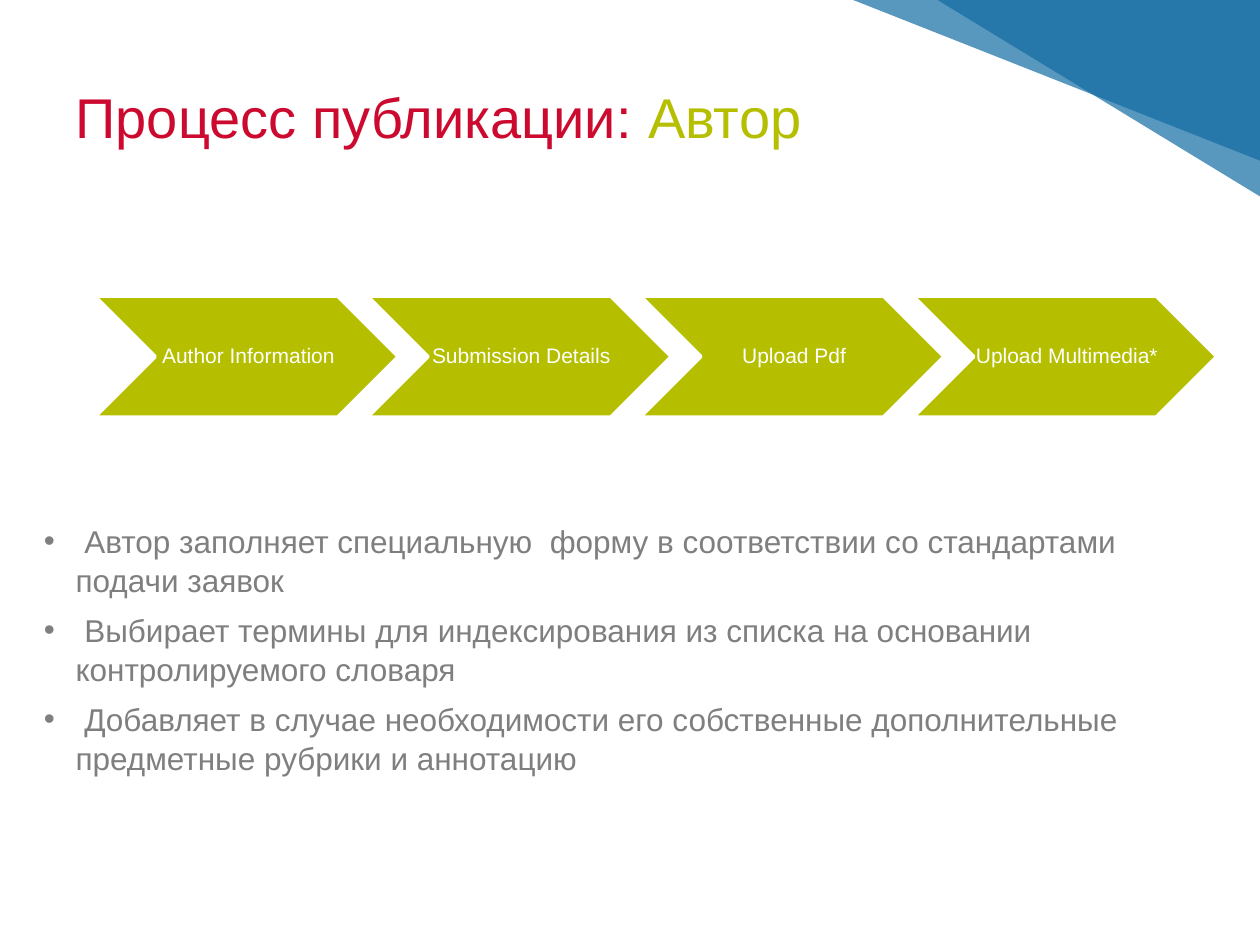
"""Build the slide on the author's part of the publication process."""
from lxml import etree
from pptx import Presentation
from pptx.dml.color import RGBColor
from pptx.enum.shapes import MSO_SHAPE
from pptx.enum.text import MSO_ANCHOR, MSO_AUTO_SIZE, PP_ALIGN
from pptx.oxml.ns import qn
from pptx.util import Cm, Pt

TRIANGLE = MSO_SHAPE.RIGHT_TRIANGLE
CHEVRON = MSO_SHAPE.CHEVRON
MIDDLE = MSO_ANCHOR.MIDDLE
TOP = MSO_ANCHOR.TOP
NO_AUTOFIT = MSO_AUTO_SIZE.NONE
LEFT = PP_ALIGN.LEFT
CENTER = PP_ALIGN.CENTER

BLUE = RGBColor(0x0F, 0x6A, 0xA1)
RED = RGBColor(0xCC, 0x09, 0x2F)
LIME = RGBColor(0xB5, 0xBF, 0x00)
GRAY = RGBColor(0x7F, 0x7F, 0x7F)
WHITE = RGBColor(0xFF, 0xFF, 0xFF)
FONT = "Arial"

CORNERS = [(18.9, 6.55, 3.99), (17.2, 8.23, 3.25)]
STEPS = ["Author Information", "Submission Details", "Upload Pdf", "Upload Multimedia*"]
STEP_LEFT, STEP_PITCH = 1.91, 5.5
DUTIES = [
    " Автор заполняет специальную  форму в соответствии со стандартами подачи заявок",
    " Выбирает термины для индексирования из списка на основании контролируемого словаря",
    " Добавляет в случае необходимости его собственные дополнительные предметные рубрики и аннотацию",
]


def place(shape, left, top, width, height):
    shape.left, shape.top = Cm(left), Cm(top)
    shape.width, shape.height = Cm(width), Cm(height)


def style(font, size, color):
    font.name = FONT
    font.size = Pt(size)
    font.color.rgb = color


presentation = Presentation()
presentation.slide_width = Cm(25.4)
presentation.slide_height = Cm(19.05)
slide = presentation.slides.add_slide(presentation.slide_layouts[1])

for left, width, height in CORNERS:
    corner = slide.shapes.add_shape(TRIANGLE, Cm(left), 0, Cm(width), Cm(height))
    corner.rotation = 180
    corner.shadow.inherit = False
    corner.fill.solid()
    corner.fill.fore_color.rgb = BLUE
    corner.line.fill.background()
    color_element = corner.fill._xPr.find(qn("a:solidFill"))[0]
    etree.SubElement(color_element, qn("a:alpha"), val="69000")

title = slide.shapes.title
place(title, 1.27, 0.76, 19.08, 3.18)
title.text_frame.vertical_anchor = MIDDLE
title.text_frame.auto_size = NO_AUTOFIT
paragraph = title.text_frame.paragraphs[0]
paragraph.alignment = LEFT
for text, color in [("Процесс публикации: ", RED), ("Aвтор", LIME)]:
    run = paragraph.add_run()
    run.text = text
    style(run.font, 32, color)

for index, step in enumerate(STEPS):
    left = Cm(STEP_LEFT + index * STEP_PITCH)
    chevron = slide.shapes.add_shape(CHEVRON, left, Cm(5.97), Cm(6.12), Cm(2.44))
    chevron.shadow.inherit = False
    chevron.fill.solid()
    chevron.fill.fore_color.rgb = LIME
    chevron.line.color.rgb = WHITE
    chevron.line.width = Pt(2)
    frame = chevron.text_frame
    frame.text = step
    frame.word_wrap = False
    frame.vertical_anchor = MIDDLE
    frame.margin_left = Cm(0.13)
    frame.margin_top = frame.margin_right = frame.margin_bottom = Cm(0.05)
    paragraph = frame.paragraphs[0]
    paragraph.alignment = CENTER
    paragraph.line_spacing = 0.9
    style(paragraph.runs[0].font, 12, WHITE)

duties = slide.placeholders[1]
place(duties, 0, 10.36, 24.33, 6.27)
frame = duties.text_frame
frame.text = "\n".join(DUTIES)
frame.vertical_anchor = TOP
frame.auto_size = NO_AUTOFIT
for index, paragraph in enumerate(frame.paragraphs):
    properties = paragraph._p.get_or_add_pPr()
    properties.set("marL", str(Cm(1.27)))
    properties.set("indent", str(-Cm(0.64)))
    bullet_color = etree.SubElement(properties, qn("a:buClr"))
    etree.SubElement(bullet_color, qn("a:srgbClr"), val=str(GRAY))
    etree.SubElement(properties, qn("a:buFont"), typeface=FONT)
    etree.SubElement(properties, qn("a:buChar"), char="•")
    paragraph.alignment = LEFT
    paragraph.line_spacing = 1.04
    paragraph.space_before = Pt(6 if index else 0)
    style(paragraph.runs[0].font, 18, GRAY)

presentation.save("out.pptx")
